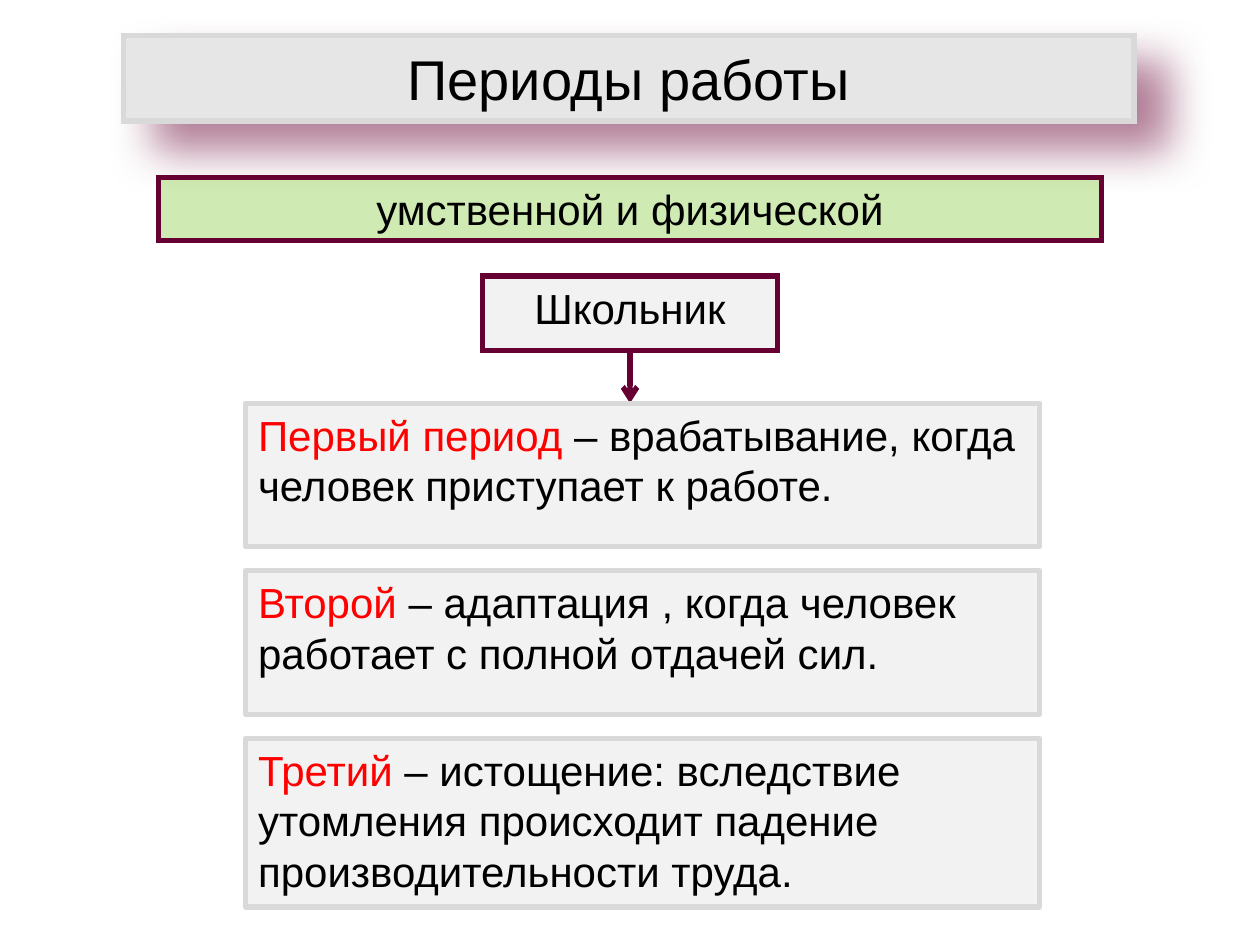
from lxml.etree import SubElement
from pptx import Presentation
from pptx.dml.color import RGBColor
from pptx.enum.shapes import MSO_CONNECTOR, MSO_SHAPE
from pptx.enum.text import MSO_ANCHOR, MSO_AUTO_SIZE, PP_ALIGN
from pptx.oxml.ns import qn
from pptx.util import Emu, Pt

PX = 9144
BLACK, RED, PLUM = "000000", "FF0000", "660033"
SILVER, PALE = "D9D9D9", "F2F2F2"
PERIODS = [
    ("Первый период ", "– врабатывание, когда человек приступает к работе.", 114),
    ("Второй ", "– адаптация , когда человек работает с полной отдачей сил.", 114),
    ("Третий", " – истощение: вследствие утомления происходит падение "
               "производительности труда.", 134),
]


def px(value):
    return Emu(value * PX)


def color(value):
    return RGBColor.from_string(value)


def apply(target, values):
    for name, value in values.items():
        setattr(target, name, value)


def add_element(parent, tag, **attributes):
    return SubElement(parent, qn(tag), {key: str(value) for key, value in attributes.items()})


def style_line(line, value):
    line.color.rgb = color(value)
    line.width = Pt(3)


def style_box(shape, box, fill, line, miter=False):
    apply(shape, dict(zip(("left", "top", "width", "height"), map(px, box))))
    shape.fill.solid()
    shape.fill.fore_color.rgb = color(fill)
    style_line(shape.line, line)
    if miter:
        add_element(shape.line._get_or_add_ln(), "a:miter", lim=800000)
    shape.shadow.inherit = False


def write(shape, runs, size, align, anchor=MSO_ANCHOR.TOP):
    frame = shape.text_frame
    apply(frame, {
        "word_wrap": True, "auto_size": MSO_AUTO_SIZE.NONE, "vertical_anchor": anchor,
        "margin_left": px(10), "margin_right": px(10),
        "margin_top": px(5), "margin_bottom": px(5),
    })
    para = frame.paragraphs[0]
    apply(para, {"alignment": align, "space_before": Pt(0)})
    for text, value in runs:
        span = para.add_run()
        span.text = text
        apply(span.font, {"name": "Arial", "size": Pt(size), "bold": False})
        span.font.color.rgb = color(value)


def add_title(page, box):
    title = page.shapes.title
    style_box(title, box, "E6E6E6", SILVER, miter=True)
    effects = title._element.spPr.find(qn("a:effectLst"))
    shadow = add_element(effects, "a:outerShdw", blurRad=Pt(25), dist=Pt(23),
                         dir=40 * 60000, algn="tl", rotWithShape=0)
    shade = add_element(shadow, "a:srgbClr", val=PLUM)
    add_element(shade, "a:alpha", val=50000)
    write(title, [("Периоды работы", BLACK)], 32, PP_ALIGN.CENTER, MSO_ANCHOR.MIDDLE)


def add_heading(page, box, text, fill, opacity=100):
    heading = page.shapes.add_shape(MSO_SHAPE.RECTANGLE, 0, 0, 0, 0)
    style_box(heading, box, fill, PLUM, miter=True)
    if opacity < 100:
        shade = heading._element.spPr.find(qn("a:solidFill"))[0]
        add_element(shade, "a:alpha", val=opacity * 1000)
    write(heading, [(text, BLACK)], 24, PP_ALIGN.CENTER)


def add_arrow(page, center, top, bottom):
    arrow = page.shapes.add_connector(MSO_CONNECTOR.STRAIGHT, px(center), px(top),
                                      px(center), px(bottom))
    style_line(arrow.line, PLUM)
    add_element(arrow.line._get_or_add_ln(), "a:tailEnd", type="arrow")
    add_element(arrow._element.spPr, "a:effectLst")


def add_periods(page, left, top, width, gap):
    for name, description, height in PERIODS:
        period = page.shapes.add_shape(MSO_SHAPE.RECTANGLE, 0, 0, 0, 0)
        style_box(period, (left, top, width, height), PALE, SILVER)
        write(period, [(name, RED), (description, BLACK)], 24, PP_ALIGN.LEFT)
        top += height + gap


def main():
    deck = Presentation()
    apply(deck, {"slide_width": px(1000), "slide_height": px(750)})
    page = deck.slides.add_slide(deck.slide_layouts[5])
    add_title(page, (98, 28, 802, 68))
    add_heading(page, (126, 141, 748, 50), "умственной и физической", "92D050", 44)
    add_heading(page, (383, 219, 234, 59), "Школьник", PALE)
    add_arrow(page, 500, 278, 320)
    add_periods(page, 195, 320, 630, 19)
    deck.save("out.pptx")


if __name__ == "__main__":
    main()
